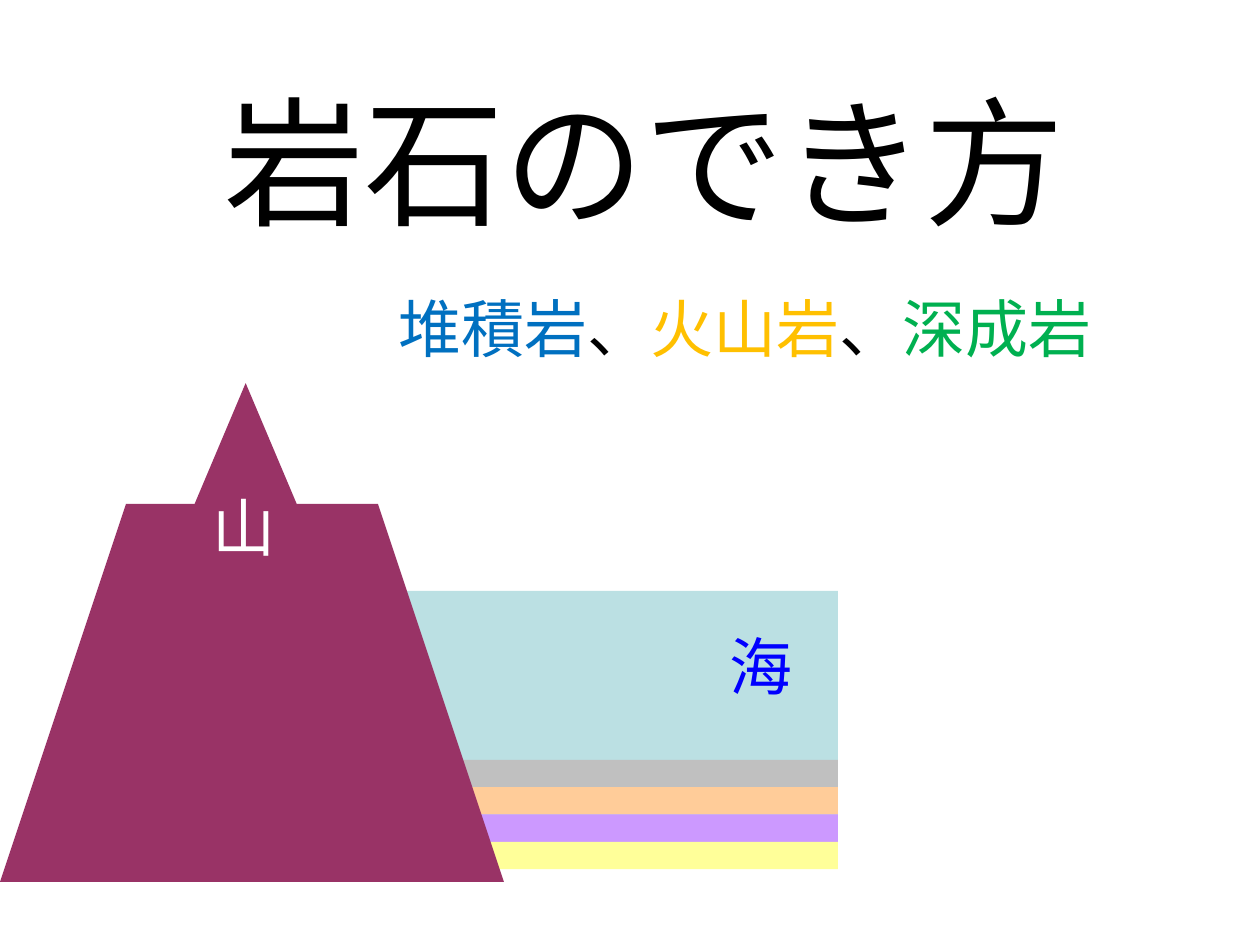
"""Build a title slide on how rocks form, with a mountain beside a layered sea."""
from pptx import Presentation
from pptx import util as u
from pptx.dml.color import RGBColor
from pptx.enum import shapes, text
from pptx.oxml.ns import qn
from lxml import etree

JAPANESE_FONT = "Noto Sans CJK JP"
TITLE = [("岩石のでき方", "000000")]
SUBTITLE = [
    ("堆積岩", "0070C0"),
    ("、", "000000"),
    ("火山岩", "FFC000"),
    ("、", "000000"),
    ("深成岩", "00B050"),
]
SEA = {"left": 2.32, "top": 4.69, "width": 4.33, "height": 2.2, "colour": "BBE0E3"}
STRATA = ["C0C0C0", "FFCC99", "CC99FF", "FFFF99"]
STRATA_TOP, STRATUM_HEIGHT = 6.03, 0.217
MOUNTAIN_COLOUR = "993366"
MOUNTAIN_BASE = [(3.66, 6.87), (2.83, 4.42), (1.18, 4.42), (0.35, 6.87)]
MOUNTAIN_PEAK = (1.35, 3.04, 1.2, 1.42)
LABELS = [("山", 1.69, 3.83, "FFFFFF"), ("海", 5.79, 4.93, "0000FF")]
LABEL_SIZE = 0.5


def colour(value):
    return RGBColor.from_string(value)


def place(shape, *box):
    shape.left, shape.top, shape.width, shape.height = map(u.Inches, box)


def write(shape, pieces, size, font):
    frame = shape.text_frame
    frame.auto_size = text.MSO_AUTO_SIZE.NONE
    paragraph = frame.paragraphs[0]
    paragraph.alignment = text.PP_ALIGN.CENTER
    for words, hue in pieces:
        run = paragraph.add_run()
        run.text = words
        run.font.size = u.Pt(size)
        run.font.name = font
        run.font.color.rgb = colour(hue)
        east_asian = etree.SubElement(run.font._element, qn("a:ea"))
        east_asian.set("typeface", JAPANESE_FONT)


def paint(shape, hue):
    shape.shadow.inherit = False
    shape.fill.solid()
    shape.fill.fore_color.rgb = colour(hue)
    shape.line.fill.background()


def add_block(slide, kind, box, hue):
    shape = slide.shapes.add_shape(kind, *map(u.Inches, box))
    paint(shape, hue)


def add_headings(slide):
    title, subtitle = slide.placeholders
    place(title, 0.67, 0.44, 8.9, 1.65)
    write(title, TITLE, 80, "Arial")
    title.text_frame.vertical_anchor = text.MSO_ANCHOR.MIDDLE
    place(subtitle, 2.64, 2.25, 6.54, 0.71)
    write(subtitle, SUBTITLE, 36, "Arial")
    subtitle.text_frame.vertical_anchor = text.MSO_ANCHOR.TOP


def add_sea(slide):
    rectangle = shapes.MSO_SHAPE.RECTANGLE
    left, width = SEA["left"], SEA["width"]
    add_block(slide, rectangle, (left, SEA["top"], width, SEA["height"]), SEA["colour"])
    for row, hue in enumerate(STRATA):
        top = STRATA_TOP + row * STRATUM_HEIGHT
        add_block(slide, rectangle, (left, top, width, STRATUM_HEIGHT), hue)


def add_mountain(slide):
    start, *corners = MOUNTAIN_BASE
    builder = slide.shapes.build_freeform(*start, scale=u.Inches(1))
    builder.add_line_segments(corners, close=True)
    paint(builder.convert_to_shape(), MOUNTAIN_COLOUR)
    add_block(slide, shapes.MSO_SHAPE.ISOSCELES_TRIANGLE, MOUNTAIN_PEAK, MOUNTAIN_COLOUR)


def add_labels(slide):
    for words, left, top, hue in LABELS:
        box = map(u.Inches, (left, top, LABEL_SIZE, LABEL_SIZE))
        label = slide.shapes.add_textbox(*box)
        write(label, [(words, hue)], 36, JAPANESE_FONT)
        label.text_frame.word_wrap = False


def main():
    presentation = Presentation()
    presentation.slide_width, presentation.slide_height = u.Inches(10), u.Inches(7.5)
    slide = presentation.slides.add_slide(presentation.slide_layouts[0])
    add_headings(slide)
    add_sea(slide)
    add_mountain(slide)
    add_labels(slide)
    presentation.save("out.pptx")


if __name__ == "__main__":
    main()
